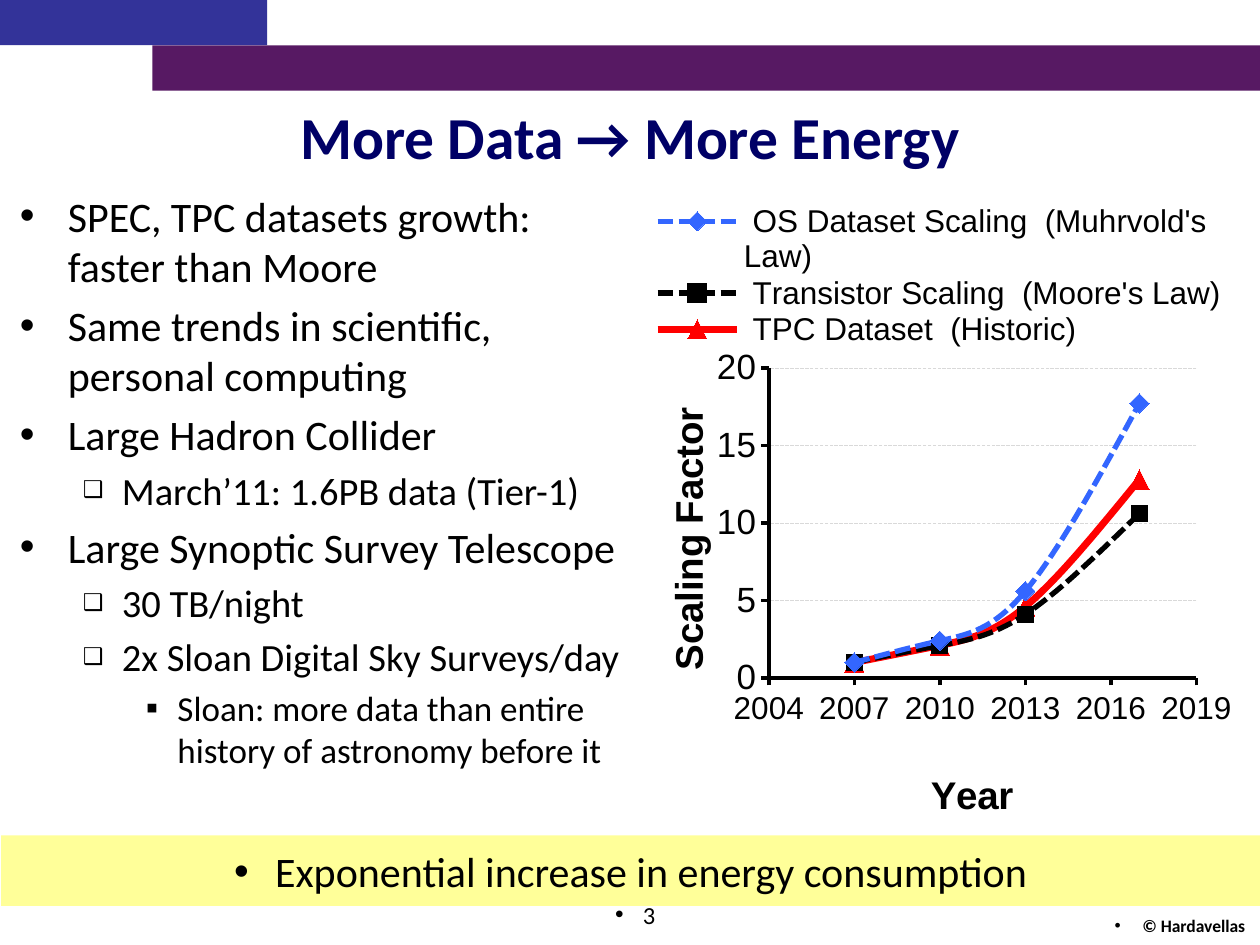
from lxml.etree import SubElement
from pptx import Presentation
from pptx.chart.data import XyChartData
from pptx.dml.color import RGBColor
from pptx.enum.chart import (XL_CHART_TYPE, XL_LEGEND_POSITION, XL_MARKER_STYLE,
                             XL_TICK_LABEL_POSITION, XL_TICK_MARK)
from pptx.enum.dml import MSO_LINE
from pptx.enum.shapes import MSO_SHAPE
from pptx.enum.text import MSO_ANCHOR, PP_ALIGN
from pptx.oxml.ns import qn
from pptx.util import Inches, Pt

WIDTH, HEIGHT = 10, 7.5
BAND = 0.36
BODY_FONT, CHART_FONT = "Calibri", "Arial"
TITLE = "More Data → More Energy"
POINTS = [
    (0, "SPEC, TPC datasets growth: faster than Moore"),
    (0, "Same trends in scientific, personal computing"),
    (0, "Large Hadron Collider"),
    (1, "March’11: 1.6PB data (Tier-1)"),
    (0, "Large Synoptic Survey Telescope"),
    (1, "30 TB/night"),
    (1, "2x Sloan Digital Sky Surveys/day"),
    (2, "Sloan: more data than entire history of astronomy before it"),
]
LEVELS = [
    dict(size=24, bullet=("•", 0.38, 0.38, 100)),
    dict(size=22, bullet=("❑", 0.81, 0.31, 60)),
    dict(size=20, bullet=("▪", 1.25, 0.25, 100)),
]
SMALL_BULLET = ("•", 0.22, 0.22, 100)
BANNER = " Exponential increase in energy consumption"
YEARS = [2007, 2010, 2013, 2017]
SERIES = [
    (" OS Dataset Scaling  (Muhrvold's Law)", [1, 2.4, 5.6, 17.7],
     "3366FF", 3, MSO_LINE.SQUARE_DOT, XL_MARKER_STYLE.DIAMOND, 11),
    (" Transistor Scaling  (Moore's Law)", [1, 2.1, 4.1, 10.6],
     "000000", 3, MSO_LINE.SQUARE_DOT, XL_MARKER_STYLE.SQUARE, 9),
    (" TPC Dataset  (Historic)", [1, 2.1, 4.6, 12.8],
     "FF0000", 4, MSO_LINE.SOLID, XL_MARKER_STYLE.TRIANGLE, 11),
]


def color(value):
    return RGBColor.from_string(value)


def style_font(font, size, name, value="000000", bold=False):
    font.size, font.name, font.bold = Pt(size), name, bold
    font.color.rgb = color(value)


def add_bullet(para, symbol, margin, hanging, percent):
    properties = para._p.get_or_add_pPr()
    properties.set("marL", str(Inches(margin)))
    properties.set("indent", str(-Inches(hanging)))
    SubElement(properties, qn("a:buSzPct")).set("val", str(percent * 1000))
    SubElement(properties, qn("a:buFont")).set("typeface", "Arial")
    SubElement(properties, qn("a:buChar")).set("char", symbol)


def write(para, text, size, value="000000", bold=False, align=PP_ALIGN.LEFT, bullet=None):
    if bullet:
        add_bullet(para, *bullet)
    para.alignment = align
    span = para.add_run()
    span.text = text
    style_font(span.font, size, BODY_FONT, value, bold)


def add_box(page, place, anchor=MSO_ANCHOR.TOP):
    box = page.shapes.add_textbox(*map(Inches, place))
    box.text_frame.word_wrap = True
    box.text_frame.vertical_anchor = anchor
    return box.text_frame


def add_bar(page, place, fill):
    bar = page.shapes.add_shape(MSO_SHAPE.RECTANGLE, *map(Inches, place))
    bar.shadow.inherit = False
    bar.fill.solid()
    bar.fill.fore_color.rgb = color(fill)
    bar.line.fill.background()
    return bar.text_frame


def place_part(parent, before, **shares):
    for old in parent.findall(qn("c:layout")):
        parent.remove(old)
    layout = SubElement(parent, qn("c:layout"))
    manual = SubElement(layout, qn("c:manualLayout"))
    if before is None:
        parent.insert(0, layout)
        SubElement(manual, qn("c:layoutTarget")).set("val", "inner")
    else:
        parent.find(qn(before)).addnext(layout)
    for side in "xy":
        SubElement(manual, qn(f"c:{side}Mode")).set("val", "edge")
    for side, share in shares.items():
        SubElement(manual, qn(f"c:{side}")).set("val", str(share))


def style_axis(axis, title, size, limits, corner):
    axis.minimum_scale, axis.maximum_scale, axis.major_unit = limits
    axis.major_tick_mark = XL_TICK_MARK.OUTSIDE
    axis.minor_tick_mark = XL_TICK_MARK.NONE
    axis.tick_label_position = XL_TICK_LABEL_POSITION.NEXT_TO_AXIS
    axis.tick_labels.number_format = "General"
    axis.tick_labels.number_format_is_linked = False
    style_font(axis.tick_labels.font, size, CHART_FONT)
    axis.format.line.color.rgb = color("000000")
    axis.format.line.width = Pt(2)
    span = axis.axis_title.text_frame.paragraphs[0].add_run()
    span.text = title
    style_font(span.font, 22, CHART_FONT, bold=True)
    place_part(axis.axis_title._element, "c:tx", x=corner[0], y=corner[1])


def add_scaling_chart(page, place):
    data = XyChartData()
    for name, values, *_ in SERIES:
        entry = data.add_series(name)
        for year, value in zip(YEARS, values):
            entry.add_data_point(year, value)
    chart = page.shapes.add_chart(XL_CHART_TYPE.XY_SCATTER_SMOOTH,
                                  *map(Inches, place), data).chart
    style_font(chart.font, 18, CHART_FONT)
    chart.has_title = False
    chart.plots[0].vary_by_categories = False
    for series, (_, _, tint, width, dash, symbol, size) in zip(chart.plots[0].series, SERIES):
        series.format.line.color.rgb = color(tint)
        series.format.line.width = Pt(width)
        series.format.line.dash_style = dash
        series.marker.style, series.marker.size = symbol, size
        series.marker.format.fill.solid()
        series.marker.format.fill.fore_color.rgb = color(tint)
        series.marker.format.line.color.rgb = color(tint)
        series._element.find(qn("c:smooth")).set("val", "1")

    style_axis(chart.category_axis, "Year", 18, (2004, 2019, 3), (0.48, 0.89))
    style_axis(chart.value_axis, "Scaling Factor", 20, (0, 20, 5), (0.05, 0.34))
    chart.category_axis.has_major_gridlines = False
    chart.value_axis.has_major_gridlines = True
    grid = chart.value_axis.major_gridlines.format.line
    grid.color.rgb = color("D9D9D9")
    grid.width = Pt(0.25)
    grid.dash_style = MSO_LINE.LONG_DASH

    chart.has_legend = True
    chart.legend.position = XL_LEGEND_POSITION.TOP
    chart.legend.include_in_layout = False
    style_font(chart.legend.font, 18, CHART_FONT)
    place_part(chart.legend._element, "c:legendPos", x=0.03, y=0.04, w=0.95, h=0.22)
    plot_area = chart._chartSpace.chart.plotArea
    place_part(plot_area, None, x=0.23, y=0.29, w=0.69, h=0.47)


def main():
    deck = Presentation()
    deck.slide_width, deck.slide_height = Inches(WIDTH), Inches(HEIGHT)
    page = deck.slides.add_slide(deck.slide_layouts[6])

    add_bar(page, (1.21, BAND, WIDTH - 1.21, BAND), "571963")
    add_bar(page, (0, 0, 2.12, BAND), "333399")
    title = add_box(page, (0, 2 * BAND, WIDTH, 2 * BAND), MSO_ANCHOR.MIDDLE)
    write(title.paragraphs[0], TITLE, 34, "000066", True, PP_ALIGN.CENTER)

    body = add_box(page, (0.06, 1.46, 4.99, 5.21))
    for index, (level, text) in enumerate(POINTS):
        para = body.add_paragraph() if index else body.paragraphs[0]
        para.level = level
        write(para, text, **LEVELS[level])
        if index:
            para.space_before = Pt(0.2 * LEVELS[level]["size"])

    credit = add_box(page, (6.67, 7.21, 3.31, 0.25))
    write(credit.paragraphs[0], "© Hardavellas", 10, bold=True,
          align=PP_ALIGN.RIGHT, bullet=SMALL_BULLET)
    number = add_box(page, (2.97, 7.09, 2.33, 0.52))
    write(number.paragraphs[0], "3", 14, align=PP_ALIGN.RIGHT, bullet=SMALL_BULLET)

    add_scaling_chart(page, (4.97, 1.4, 4.92, 5.24))

    banner = add_bar(page, (0.01, 6.63, WIDTH - 0.01, 0.56), "FFFF99")
    banner.vertical_anchor = MSO_ANCHOR.MIDDLE
    write(banner.paragraphs[0], BANNER, 24, align=PP_ALIGN.CENTER,
          bullet=("•", 0.25, 0.25, 100))
    deck.save("out.pptx")


if __name__ == "__main__":
    main()
